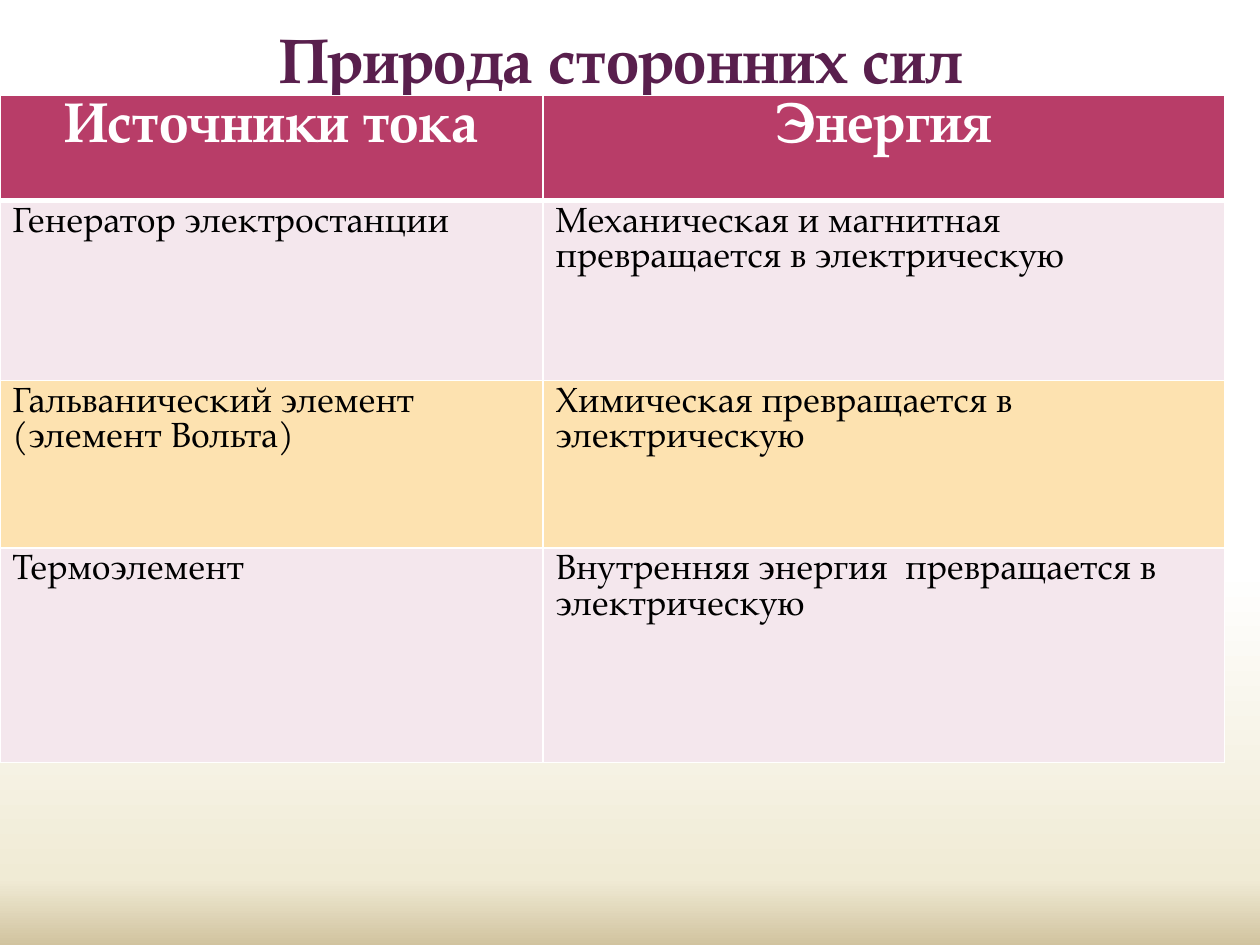
from copy import deepcopy
from dataclasses import dataclass

from pptx import Presentation
from pptx.dml.color import RGBColor as RGB
from pptx.enum.text import MSO_ANCHOR as Anchor, PP_ALIGN as Align
from pptx.oxml.ns import qn
from pptx.oxml.xmlchemy import OxmlElement
from pptx.util import Inches, Pt


@dataclass(frozen=True)
class Theme:
    font: str = "TeX Gyre Pagella"
    title_size: int = 36
    header_size: int = 32
    body_size: int = 20
    title: str = "591F4D"
    header_text: str = "FFFFFF"
    body_text: str = "000000"
    border: str = "FFFFFF"
    header_fill: str = "B83D68"
    row_fills: tuple = ("F4E7ED", "FDE2B0")
    background: tuple = ((0.6, "FFFFFF"), (0.93, "F0EBD5"), (1, "D1C39F"))


class SlideBuilder:
    def __init__(self, slide, theme):
        self.slide = slide
        self.theme = theme

    def background(self):
        fill = self.slide.background.fill
        fill.gradient()
        fill.gradient_angle = 270
        stop_list = next(self.slide.element.iter(qn("a:gsLst")))
        stop_list.append(deepcopy(stop_list[-1]))
        for stop, (position, color) in zip(fill.gradient_stops, self.theme.background):
            stop.position = position
            stop.color.rgb = RGB.from_string(color)

    def set_text(self, frame, text, size, color, bold, align):
        frame.text = text
        for paragraph in frame.paragraphs:
            paragraph.alignment = align
            font = paragraph.font
            font.name, font.size, font.bold = self.theme.font, Pt(size), bold
            font.color.rgb = RGB.from_string(color)

    def title(self, text, left, top, width, height):
        heading = self.slide.shapes.title
        heading.left, heading.top = Inches(left), Inches(top)
        heading.width, heading.height = Inches(width), Inches(height)
        heading.text_frame.vertical_anchor = Anchor.MIDDLE
        self.set_text(heading.text_frame, text, self.theme.title_size,
                      self.theme.title, True, Align.CENTER)

    def borders(self, cell, widths):
        """Draw solid borders; widths maps a side (L, R, T, B) to points."""
        properties = cell._tc.get_or_add_tcPr()
        for index, (side, width) in enumerate(widths.items()):
            line = OxmlElement(f"a:ln{side}")
            line.set("w", str(Pt(width)))
            solid = OxmlElement("a:solidFill")
            color = OxmlElement("a:srgbClr")
            color.set("val", self.theme.border)
            solid.append(color)
            line.append(solid)
            properties.insert(index, line)

    def table(self, rows, left, top, widths, heights):
        theme = self.theme
        table = self.slide.shapes.add_table(
            len(rows), len(widths), Inches(left), Inches(top),
            Inches(sum(widths)), Inches(sum(heights))).table
        for column, width in zip(table.columns, widths):
            column.width = Inches(width)
        for r, (row, height) in enumerate(zip(rows, heights)):
            table.rows[r].height = Inches(height)
            header = r == 0
            fill = theme.header_fill if header else theme.row_fills[(r - 1) % 2]
            for c, text in enumerate(row):
                cell = table.cell(r, c)
                cell.fill.solid()
                cell.fill.fore_color.rgb = RGB.from_string(fill)
                self.borders(cell, {"L": 1, "R": 1, "T": 3 if r == 1 else 1,
                                    "B": 3 if header else 1})
                if header:
                    self.set_text(cell.text_frame, text, theme.header_size,
                                  theme.header_text, True, Align.CENTER)
                else:
                    self.set_text(cell.text_frame, text, theme.body_size,
                                  theme.body_text, False, Align.LEFT)


ENERGY_SOURCES = [
    ("Источники тока", "Энергия"),
    ("Генератор электростанции",
     "Механическая и магнитная превращается в электрическую"),
    ("Гальванический элемент\n(элемент Вольта)",
     "Химическая превращается в электрическую"),
    ("Термоэлемент", "Внутренняя энергия  превращается в электрическую"),
]


def main():
    presentation = Presentation()
    presentation.slide_width, presentation.slide_height = Inches(10), Inches(7.5)
    title_only = presentation.slide_layouts[5]
    builder = SlideBuilder(presentation.slides.add_slide(title_only), Theme())
    builder.background()
    builder.title("Природа сторонних сил", 0.43, 0, 9, 0.93)
    builder.table(ENERGY_SOURCES, 0, 0.76, widths=(4.31, 5.41),
                  heights=(0.83, 1.43, 1.33, 1.7))
    presentation.save("out.pptx")


if __name__ == "__main__":
    main()
